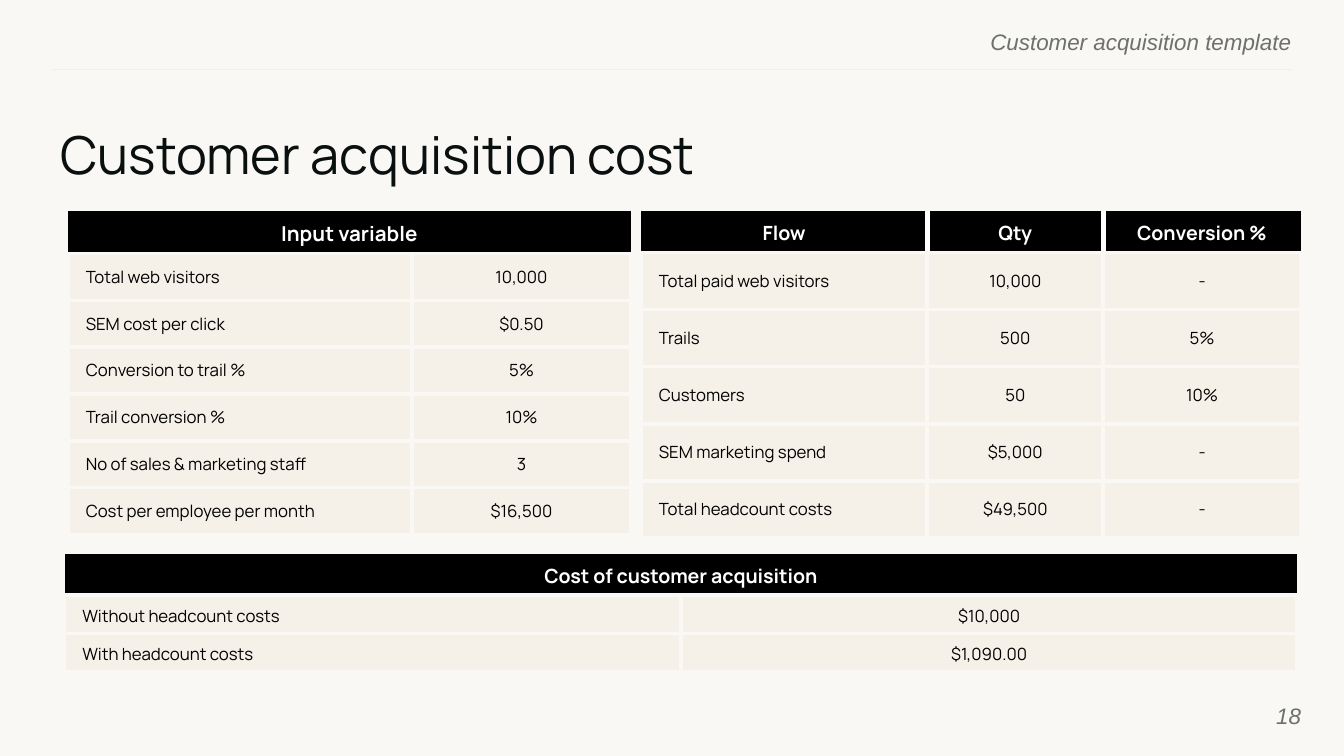
from pptx import Presentation
from pptx.dml.color import RGBColor
from pptx.enum.shapes import MSO_CONNECTOR as Link
from pptx.enum.text import MSO_ANCHOR as Anchor, PP_ALIGN as Align
from pptx.oxml.ns import qn
from pptx.util import Pt
from lxml.etree import SubElement

PAPER = RGBColor(0xF9, 0xF8, 0xF5)
SAND = RGBColor(0xF5, 0xF1, 0xE8)
BLACK = RGBColor(0, 0, 0)
WHITE = RGBColor(0xFF, 0xFF, 0xFF)
INK = RGBColor(0x09, 0x10, 0x0F)
GRAY = RGBColor(0x6C, 0x70, 0x6F)
RULE = RGBColor(0xEF, 0xEF, 0xEF)

SANS = "Manrope"
SIDE = "Arial"
EDGE = (PAPER, 2.25)
GAP = (WHITE, 3)

COST = [
    ["Cost of customer acquisition"],
    ["Without headcount costs", "$10,000"],
    ["With headcount costs", "$1,090.00"],
]
INPUT = [
    ["Input variable"],
    ["Total web visitors", "10,000"],
    ["SEM cost per click", "$0.50"],
    ["Conversion to trail %", "5%"],
    ["Trail conversion %", "10%"],
    ["No of sales & marketing staff", "3"],
    ["Cost per employee per month", "$16,500"],
]
FLOW = [
    ["Flow", "Qty", "Conversion %"],
    ["Total paid web visitors", "10,000", "-"],
    ["Trails", "500", "5%"],
    ["Customers", "50", "10%"],
    ["SEM marketing spend", "$5,000", "-"],
    ["Total headcount costs", "$49,500", "-"],
]


def style(para, face, size, color, bold=False, italic=False):
    for run in para.runs:
        font = run.font
        font.name, font.size = face, Pt(size)
        font.bold, font.italic = bold, italic
        font.color.rgb = color


def add_text(slide, box, text, face, size, color, align=Align.LEFT,
             anchor=Anchor.TOP, italic=False):
    frame = slide.shapes.add_textbox(*map(Pt, box)).text_frame
    frame.word_wrap = True
    frame.margin_left = frame.margin_right = 0
    frame.margin_top = frame.margin_bottom = 0
    frame.vertical_anchor = anchor
    frame.text = text
    para = frame.paragraphs[0]
    para.alignment = align
    style(para, face, size, color, italic=italic)


def add_rule(slide, left, right, y):
    line = slide.shapes.add_connector(
        Link.STRAIGHT, Pt(right), Pt(y), Pt(left), Pt(y))
    line.line.color.rgb = RULE
    line.line.width = Pt(0.75)
    SubElement(line._element.spPr, qn("a:effectLst"))


def set_edges(cell, **edges):
    """Draw the L, R, T and B borders given; leave the others empty."""
    props = cell._tc.get_or_add_tcPr()
    for side in "LRTB":
        line = SubElement(props, qn(f"a:ln{side}"))
        if side in edges:
            color, width = edges[side]
            line.set("w", str(Pt(width)))
            fill = SubElement(line, qn("a:solidFill"))
            SubElement(fill, qn("a:srgbClr")).set("val", str(color))
        else:
            SubElement(line, qn("a:noFill"))


def set_cell(cell, text, fill, size, color, align, bold):
    cell.fill.solid()
    cell.fill.fore_color.rgb = fill
    cell.margin_left = cell.margin_right = Pt(9.6)
    cell.margin_top = cell.margin_bottom = Pt(4.8)
    cell.vertical_anchor = Anchor.MIDDLE
    cell.text = text
    para = cell.text_frame.paragraphs[0]
    para.alignment = align
    style(para, SANS, size, color, bold)


def add_grid(slide, left, top, widths, head, step, rows, size=10.5):
    """Add a table; a header with one label spans all columns."""
    count, last = len(rows), len(widths) - 1
    high = head + step * (count - 1)
    table = slide.shapes.add_table(
        count, len(widths), Pt(left), Pt(top), Pt(sum(widths)), Pt(high)).table
    table.first_row = table.horz_banding = False
    for col, width in zip(table.columns, widths):
        col.width = Pt(width)
    for row in table.rows:
        row.height = Pt(step)
    table.rows[0].height = Pt(head)

    merged = len(rows[0]) == 1
    if merged:
        table.cell(0, 0).merge(table.cell(0, last))
    for c in range(last + 1):
        cell = table.cell(0, c)
        edges = {"B": EDGE}
        if not merged and c > 0:
            edges["L"] = GAP
        if not merged and c < last:
            edges["R"] = GAP
        set_edges(cell, **edges)
        if not cell.is_spanned:
            set_cell(cell, rows[0][c], BLACK, size, WHITE, Align.CENTER, True)
    for r, row in enumerate(rows[1:], 1):
        for c, text in enumerate(row):
            cell = table.cell(r, c)
            set_edges(cell, L=EDGE, R=EDGE, T=EDGE, B=EDGE)
            align = Align.CENTER if c else Align.LEFT
            set_cell(cell, text, SAND, 9, BLACK, align, False)


def main():
    deck = Presentation()
    deck.slide_width, deck.slide_height = Pt(720), Pt(405)
    slide = deck.slides.add_slide(deck.slide_layouts[6])
    slide.background.fill.solid()
    slide.background.fill.fore_color.rgb = PAPER

    add_text(slide, (414.7, 14.9, 277.2, 13), "Customer acquisition template",
             SIDE, 12, GRAY, Align.RIGHT, italic=True)
    add_rule(slide, 28, 692, 37.3)
    add_text(slide, (32.4, 65.5, 664.6, 36.7), "Customer acquisition cost",
             SANS, 28, INK)
    add_text(slide, (653.8, 367.9, 43.2, 31), "18", SIDE, 12, GRAY,
             Align.RIGHT, Anchor.MIDDLE, italic=True)

    add_grid(slide, 34.6, 296.7, (330.2, 330.2), 20.2, 20.2, COST)
    add_grid(slide, 36.4, 113, (184.3, 117.4), 21.6, 25.1, INPUT, 11)
    add_grid(slide, 343.4, 113, (153.4, 94.3, 105.8), 22.3, 30.6, FLOW)
    deck.save("out.pptx")


if __name__ == "__main__":
    main()
